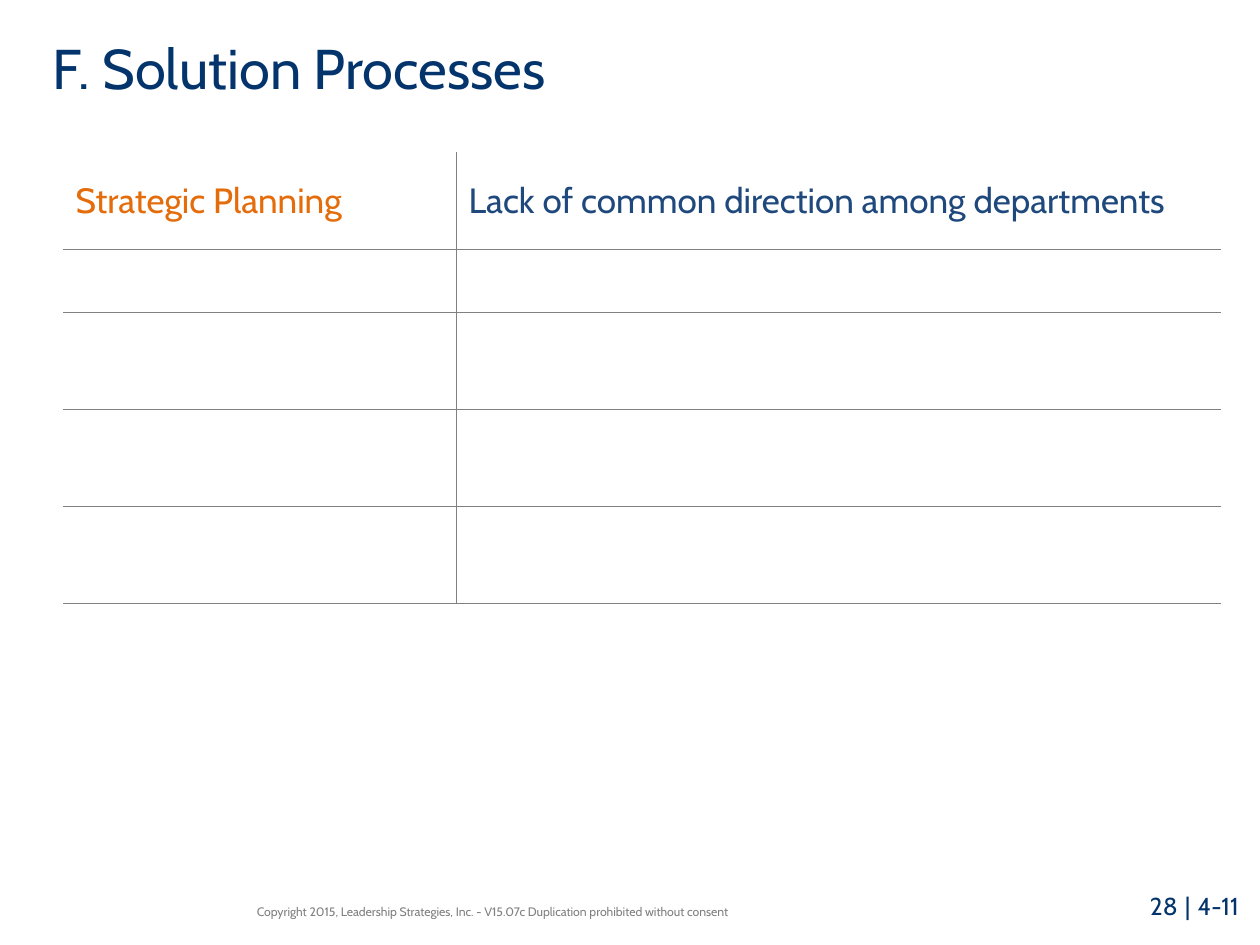
import pptx
import pptx.dml.color
import pptx.enum.text
import pptx.oxml
import pptx.oxml.ns
import pptx.util
from pptx.util import Inches

COLORS = {"navy": "04346C", "blue": "1F497D", "orange": "E46C0A",
          "gray": "808080", "black": "000000"}
FONT = "Cabin"
MIDDLE = pptx.enum.text.MSO_ANCHOR.MIDDLE
ALIGN = pptx.enum.text.PP_ALIGN


def add_run(p, text, size, color, font=FONT):
    r = p.add_run()
    r.text = text
    r.font.size = pptx.util.Pt(size)
    r.font.name = font
    r.font.color.rgb = pptx.dml.color.RGBColor.from_string(COLORS[color])


def add_title(s, left, top, width, height):
    sp = s.shapes.title
    sp.left, sp.top, sp.width, sp.height = left, top, width, height
    tf = sp.text_frame
    tf.vertical_anchor = MIDDLE
    p = tf.paragraphs[0]
    p.alignment = ALIGN.LEFT
    add_run(p, "F. Solution Processes", 32, "navy")


def set_borders(cell, sides):
    """Rule the given sides in gray and leave the others without a line."""
    tc_pr = cell._tc.get_or_add_tcPr()
    for side in "LRTB":
        if side in sides:
            line = f'<a:solidFill><a:srgbClr val="{COLORS["gray"]}"/></a:solidFill>'
        else:
            line = "<a:noFill/>"
        tc_pr.append(pptx.oxml.parse_xml(
            f'<a:ln{side} {pptx.oxml.ns.nsdecls("a")} w="6350">{line}</a:ln{side}>'))


def add_process_table(s, left, top, width, height):
    row_heights = [0.77, 0.5, 0.77, 0.77, 0.77]
    headings = [("Strategic Planning", "orange"),
                ("Lack of common direction among departments", "blue")]
    table = s.shapes.add_table(len(row_heights), len(headings),
                               left, top, width, height).table
    table.first_row = table.horz_banding = False
    table.columns[0].width = Inches(3.12)
    table.columns[1].width = width - Inches(3.12)
    for row, row_height in zip(table.rows, row_heights):
        row.height = Inches(row_height)
    for i, row in enumerate(table.rows):
        for j, cell in enumerate(row.cells):
            set_borders(cell, ("T" if i else "") + "B" + "RL"[j])
            cell.fill.background()
            cell.vertical_anchor = MIDDLE
    for cell, (text, color) in zip(table.rows[0].cells, headings):
        add_run(cell.text_frame.paragraphs[0], text, 20, color)


def add_copyright(s, left, top, width, height):
    tf = s.shapes.add_textbox(left, top, width, height).text_frame
    tf.word_wrap = True
    tf.vertical_anchor = MIDDLE
    add_run(tf.paragraphs[0],
            "Copyright 2015, Leadership Strategies, Inc. - V15.07c "
            "Duplication prohibited without consent", 7, "gray")


def add_page_number(s, left, top, width, height):
    tf = s.shapes.add_textbox(left, top, width, height).text_frame
    tf.word_wrap = True
    p = tf.paragraphs[0]
    p.alignment = ALIGN.CENTER
    for i, part in enumerate(["28", "|", "4-11"]):
        if i:
            add_run(p, " ", 18, "black", "Calibri")
        add_run(p, part, 14, "navy")


def main():
    prs = pptx.Presentation()
    prs.slide_width, prs.slide_height = Inches(10), Inches(7.5)
    s = prs.slides.add_slide(prs.slide_layouts.get_by_name("Title Only"))
    add_title(s, Inches(0.32), Inches(0), Inches(7.46), Inches(1.06))
    add_process_table(s, Inches(0.5), Inches(1.21), Inches(9.19), Inches(3.58))
    add_copyright(s, Inches(1.94), Inches(7.08), Inches(4.64), Inches(0.31))
    add_page_number(s, Inches(8.96), Inches(6.97), Inches(1.04), Inches(0.53))
    prs.save("out.pptx")


if __name__ == "__main__":
    main()
